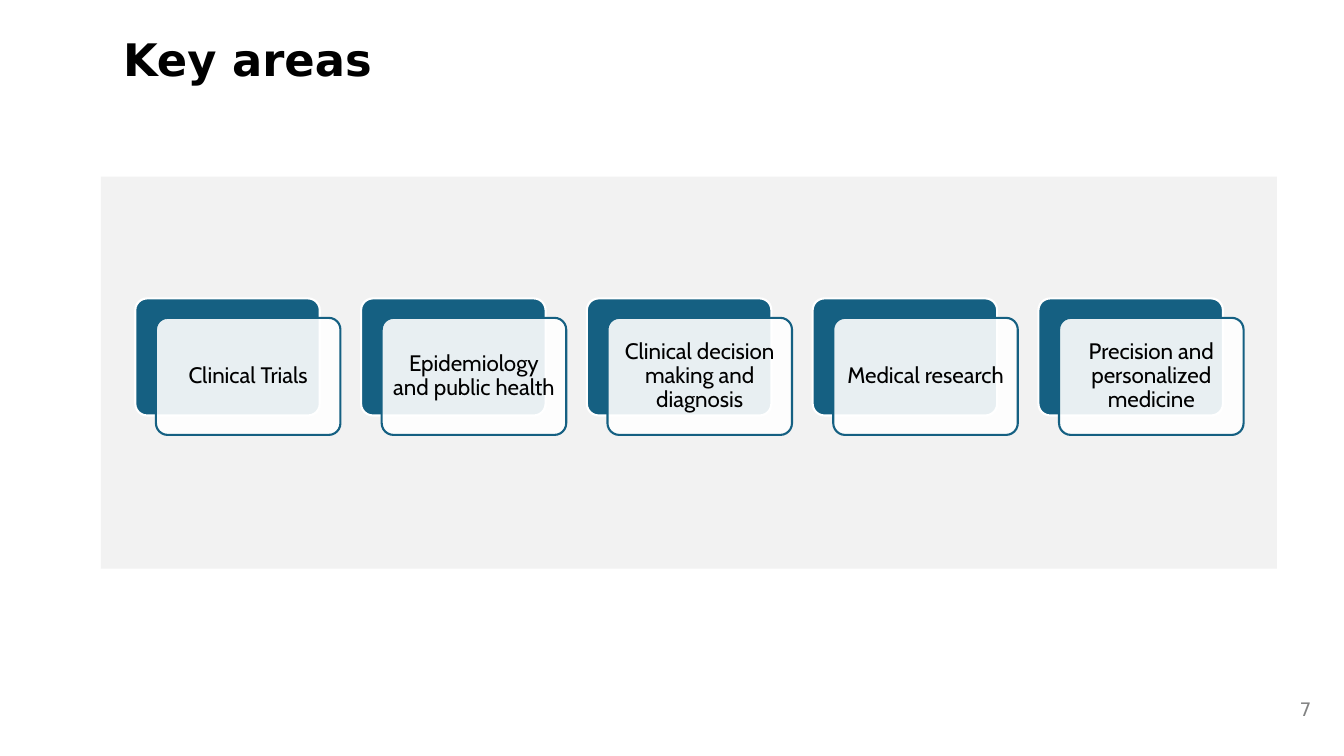
"""Build the "Key areas" slide: a row of five layered cards on a pale panel."""
from lxml import etree
from pptx import Presentation
from pptx.dml.color import RGBColor
from pptx.enum import shapes, text
from pptx.oxml import ns
from pptx.util import Cm, Pt

COLOURS = {
    "panel": "F2F2F2",
    "accent": "156082",
    "white": "FFFFFF",
    "ink": "000000",
    "number": "828383",
}
AREAS = [
    "Clinical Trials",
    "Epidemiology and public health",
    "Clinical decision making and diagnosis",
    "Medical research",
    "Precision and personalized medicine",
]
ROW_LEFT, ROW_TOP, PITCH = 3.41, 7.52, 5.69
CARD_WIDTH, CARD_HEIGHT = 4.65, 2.95
SHIFT_X, SHIFT_Y = 0.52, 0.49


def colour(name):
    """Return the named colour."""
    return RGBColor.from_string(COLOURS[name])


def apply(target, formats):
    """Set each attribute of the target from a dict of values."""
    for attribute, value in formats.items():
        setattr(target, attribute, value)


def write(frame, wording, ink, font, paragraph, inset):
    """Fill a text frame with one formatted paragraph."""
    margins = {f"margin_{side}": Cm(inset) for side in ("left", "right", "top", "bottom")}
    apply(frame, {"text": wording, "word_wrap": True,
                  "auto_size": text.MSO_AUTO_SIZE.NONE,
                  "vertical_anchor": text.MSO_ANCHOR.MIDDLE, **margins})
    line = frame.paragraphs[0]
    apply(line, paragraph)
    apply(line.runs[0].font, font)
    line.runs[0].font.color.rgb = colour(ink)


def add_block(slide, preset, box, fill, outline=None):
    """Add a filled preset shape with an optional outline."""
    block = slide.shapes.add_shape(preset, *map(Cm, box))
    block.shadow.inherit = False
    block.fill.solid()
    block.fill.fore_color.rgb = colour(fill)
    if outline:
        block.line.color.rgb = colour(outline)
        block.line.width = Pt(1.5)
    else:
        block.line.fill.background()
    return block


def add_card(slide, left, top, fill, outline):
    """Add one rounded card layer."""
    card = add_block(slide, shapes.MSO_SHAPE.ROUNDED_RECTANGLE,
                     (left, top, CARD_WIDTH, CARD_HEIGHT), fill, outline)
    card.adjustments[0] = 0.1
    return card


def set_opacity(block, percent):
    """Make a solid fill partly transparent."""
    tint = block.fill._xPr.find(ns.qn("a:solidFill"))[0]
    etree.SubElement(tint, ns.qn("a:alpha")).set("val", str(percent * 1000))


def add_area(slide, left, label):
    """Add a dark back card and a translucent labelled front card."""
    add_card(slide, left, ROW_TOP, "accent", "white")
    front = add_card(slide, left + SHIFT_X, ROW_TOP + SHIFT_Y, "white", "accent")
    set_opacity(front, 90)
    write(front.text_frame, label, "ink", {"name": "Cabin", "size": Pt(16)},
          {"alignment": text.PP_ALIGN.CENTER, "line_spacing": 0.9}, 0.18)


def set_title(slide, wording):
    """Place and format the title placeholder."""
    title = slide.shapes.title
    apply(title, {"left": Cm(3.1), "top": Cm(0.23), "width": Cm(30.76), "height": Cm(2.51)})
    write(title.text_frame, wording, "ink",
          {"name": "DejaVu Sans", "size": Pt(32), "bold": True},
          {"alignment": text.PP_ALIGN.LEFT, "space_before": Pt(10)}, 0)


def add_page_number(slide, number):
    """Add the page number at the lower right."""
    page = slide.shapes.add_textbox(Cm(32.46), Cm(17.35), Cm(0.84), Cm(1.02))
    write(page.text_frame, number, "number", {"name": "DejaVu Sans", "size": Pt(13.3)},
          {"alignment": text.PP_ALIGN.RIGHT}, 0.25)


def main():
    """Assemble and save the slide."""
    deck = Presentation()
    apply(deck, {"slide_width": Cm(33.87), "slide_height": Cm(19.05)})
    slide = deck.slides.add_slide(deck.slide_layouts.get_by_name("Title Only"))
    set_title(slide, "Key areas")
    add_block(slide, shapes.MSO_SHAPE.RECTANGLE, (2.54, 4.45, 29.64, 9.88), "panel")
    for index, label in enumerate(AREAS):
        add_area(slide, ROW_LEFT + index * PITCH, label)
    add_page_number(slide, "7")
    deck.save("out.pptx")


if __name__ == "__main__":
    main()
